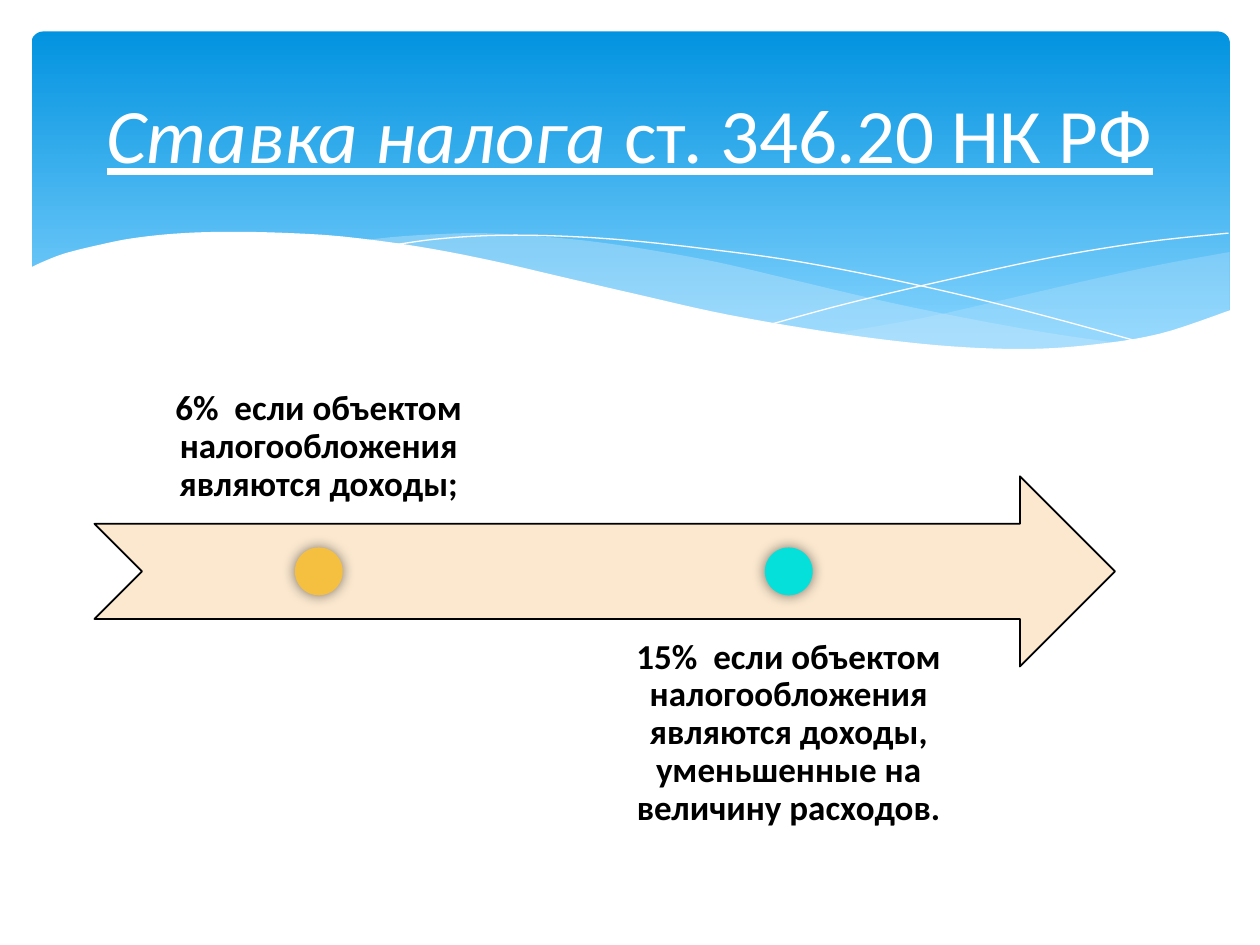
from lxml import etree
from pptx import Presentation
from pptx.dml.color import RGBColor
from pptx.enum.shapes import MSO_SHAPE
from pptx.enum.text import MSO_ANCHOR, PP_ALIGN
from pptx.oxml.ns import qn
from pptx.util import Inches, Pt

ROUNDED = MSO_SHAPE.ROUNDED_RECTANGLE
NOTCHED_ARROW = MSO_SHAPE.NOTCHED_RIGHT_ARROW
CIRCLE = MSO_SHAPE.OVAL
TOP, MIDDLE, BOTTOM = MSO_ANCHOR.TOP, MSO_ANCHOR.MIDDLE, MSO_ANCHOR.BOTTOM
CENTER = PP_ALIGN.CENTER

SLIDE_W, SLIDE_H = Inches(10), Inches(7.5)
COLUMN, ROW = SLIDE_W / 100, SLIDE_H / 75
FONT = "Calibri"

WHITE = RGBColor(0xFF, 0xFF, 0xFF)
BLACK = RGBColor(0x00, 0x00, 0x00)
SKY = RGBColor(0x02, 0x93, 0xE0)
PALE_SKY = RGBColor(0x83, 0xD3, 0xFE)
MIST = RGBColor(0xC6, 0xE7, 0xFC)
CREAM = RGBColor(0xFB, 0xE8, 0xCF)
AMBER = RGBColor(0xF5, 0xC0, 0x40)
TURQUOISE = RGBColor(0x05, 0xE0, 0xDB)

RIGHT_SWELL_TOP = [(97.6, 20), (92.1, 21), (86.1, 22.3), (77.9, 24.2), (72.9, 25.3), (66.1, 26.5)]
RIGHT_SWELL_BASE = [(66.1, 26.5), (71.9, 27.2), (76.9, 27.7), (81.4, 27.8), (85.4, 27.6),
                    (89.7, 27), (93.5, 26.2), (97.6, 24.7)]
LONG_SWELL_TOP = [(89.3, 27.3), (83.7, 26.5), (77.5, 25.4), (70.6, 24), (62.9, 22.2),
                  (56.9, 20.8), (51.4, 19.8), (46.5, 19.1), (42, 18.7), (38, 18.5),
                  (34.4, 18.6), (31.3, 18.8), (28.6, 19.1)]
LONG_SWELL_BASE = [(28.6, 19.1), (34.2, 19.9), (40.4, 21.1), (44.9, 22.2), (53, 24),
                   (60.1, 25.5), (66.5, 26.6), (72.2, 27.4), (77.3, 27.7), (81.8, 27.8),
                   (85.7, 27.7), (89.3, 27.3)]
FALLING_STRAND = [(30.9, 19.5), (34.4, 19), (38.7, 18.7), (43.3, 18.7), (48.9, 19),
                  (55.6, 19.7), (63.6, 20.8), (72.7, 22.6), (81.5, 24.7), (90.7, 27.2)]
RISING_STRAND = [(61.3, 25.7), (67.2, 24.1), (74.8, 22.3), (83.6, 20.4), (91, 19.2), (97.5, 18.5)]
FRONT_WAVE = [(97.7, 24.6), (92, 26.5), (86.3, 27.4), (80.9, 27.7), (74.4, 27.4), (66.8, 26.5),
              (57.9, 25), (50.3, 23.3), (44.7, 22), (39.1, 20.7), (34, 19.7), (29.2, 19),
              (25, 18.6), (19.3, 18.4), (14.6, 18.5), (10.6, 18.9), (7.6, 19.5),
              (5.2, 20.1), (3.6, 20.7), (2.3, 21.3)]
FRONT_BASE = [(2.3, 32.9), (97.7, 32.9)]

RATES = [
    ("6%  если объектом налогообложения являются доходы;", 7.5, 26.5, BOTTOM, AMBER),
    ("15%  если объектом налогообложения являются доходы, уменьшенные на величину расходов.",
     44.8, 49.1, TOP, TURQUOISE),
]
RATE_W, RATE_H = 35.6, 15.1
ARROW_TOP, ARROW_H = 37.8, 15.1
DOT = 3.8


def box(col, row, cols, rows):
    return [round(v) for v in (col * COLUMN, row * ROW, cols * COLUMN, rows * ROW)]


def curve(knots, steps=6):
    padded = [knots[0], *knots, knots[-1]]
    points = [knots[0]]
    for a, b, c, d in zip(padded, padded[1:], padded[2:], padded[3:]):
        for step in range(1, steps + 1):
            t = step / steps
            points.append(tuple(
                b[i] + (c[i] - a[i]) * t / 2
                + (2 * a[i] - 5 * b[i] + 4 * c[i] - d[i]) * t ** 2 / 2
                + (3 * b[i] - a[i] - 3 * c[i] + d[i]) * t ** 3 / 2
                for i in (0, 1)))
    return points


def add_outline(slide, points, close):
    corners = [(round(x * COLUMN), round(y * ROW)) for x, y in points]
    builder = slide.shapes.build_freeform(*corners[0], scale=1.0)
    builder.add_line_segments(corners[1:], close=close)
    outline = builder.convert_to_shape()
    outline.shadow.inherit = False
    return outline


def add_wave(slide, points, color, opacity=100):
    wave = add_outline(slide, points, True)
    wave.fill.solid()
    wave.fill.fore_color.rgb = color
    wave.line.fill.background()
    if opacity < 100:
        tint = wave.fill._xPr.find(qn("a:solidFill"))[0]
        etree.SubElement(tint, qn("a:alpha"), val=str(opacity * 1000))


def add_strand(slide, knots):
    strand = add_outline(slide, curve(knots), False)
    strand.fill.background()
    strand.line.color.rgb = WHITE
    strand.line.width = Pt(0)


def add_figure(slide, kind, place, color):
    figure = slide.shapes.add_shape(kind, *place)
    figure.shadow.inherit = False
    figure.fill.solid()
    figure.fill.fore_color.rgb = color
    figure.line.fill.background()
    return figure


def add_banner(slide):
    banner = add_figure(slide, ROUNDED, box(2.5, 2.5, 95.1, 27), SKY)
    banner.adjustments[0] = 0.034
    banner.fill.gradient()
    banner.fill.gradient_angle = 270
    for stop, position, color in zip(banner.fill.gradient_stops, (0, 0.9), (SKY, PALE_SKY)):
        stop.position = position
        stop.color.rgb = color


def add_glowing_dot(slide, place, color):
    dot = add_figure(slide, CIRCLE, place, color)
    effects = dot._element.spPr.find(qn("a:effectLst"))
    shadow = etree.SubElement(effects, qn("a:outerShdw"), blurRad=str(Pt(7.5)), dist="0",
                              dir="0", algn="ctr", rotWithShape="0")
    shade = etree.SubElement(shadow, qn("a:srgbClr"), val=str(BLACK))
    etree.SubElement(shade, qn("a:alpha"), val="50000")


def add_text(slide, place, anchor, runs, size, color, margin=None, spacing=None):
    label = slide.shapes.add_textbox(*place)
    frame = label.text_frame
    frame.word_wrap = True
    frame.vertical_anchor = anchor
    if margin is not None:
        frame.margin_left = frame.margin_right = margin
        frame.margin_top = frame.margin_bottom = margin
    paragraph = frame.paragraphs[0]
    paragraph.alignment = CENTER
    paragraph.line_spacing = spacing
    for words, style in runs:
        run = paragraph.add_run()
        run.text = words
        run.font.name = FONT
        run.font.size = Pt(size)
        run.font.color.rgb = color
        run.font.bold = "b" in style
        run.font.italic = "i" in style
        run.font.underline = "u" in style


def add_rate(slide, words, col, row, anchor, color):
    add_text(slide, box(col, row, RATE_W, RATE_H), anchor, [(words, "b")], 20, BLACK,
             margin=Inches(0.16), spacing=0.9)
    dot_col = col + (RATE_W - DOT) / 2
    dot_row = ARROW_TOP + (ARROW_H - DOT) / 2
    add_glowing_dot(slide, box(dot_col, dot_row, DOT, DOT), color)


def main():
    deck = Presentation()
    deck.slide_width, deck.slide_height = SLIDE_W, SLIDE_H
    slide = deck.slides.add_slide(deck.slide_layouts[6])

    add_banner(slide)
    add_wave(slide, curve(RIGHT_SWELL_TOP) + curve(RIGHT_SWELL_BASE), MIST, 29)
    add_wave(slide, curve(LONG_SWELL_TOP) + curve(LONG_SWELL_BASE), MIST, 40)
    for knots in (FALLING_STRAND, RISING_STRAND):
        add_strand(slide, knots)
    add_wave(slide, curve(FRONT_WAVE) + FRONT_BASE, WHITE)

    arrow = add_figure(slide, NOTCHED_ARROW, box(7.5, ARROW_TOP, 81, ARROW_H), CREAM)
    arrow.line.color.rgb = BLACK
    arrow.line.width = Pt(1)
    for rate in RATES:
        add_rate(slide, *rate)

    title = [("Ставка налога ", "iu"), ("ст. 346.20 НК РФ", "u")]
    add_text(slide, box(5, 3.7, 90, 13.7), MIDDLE, title, 44, WHITE)
    deck.save("out.pptx")


if __name__ == "__main__":
    main()
